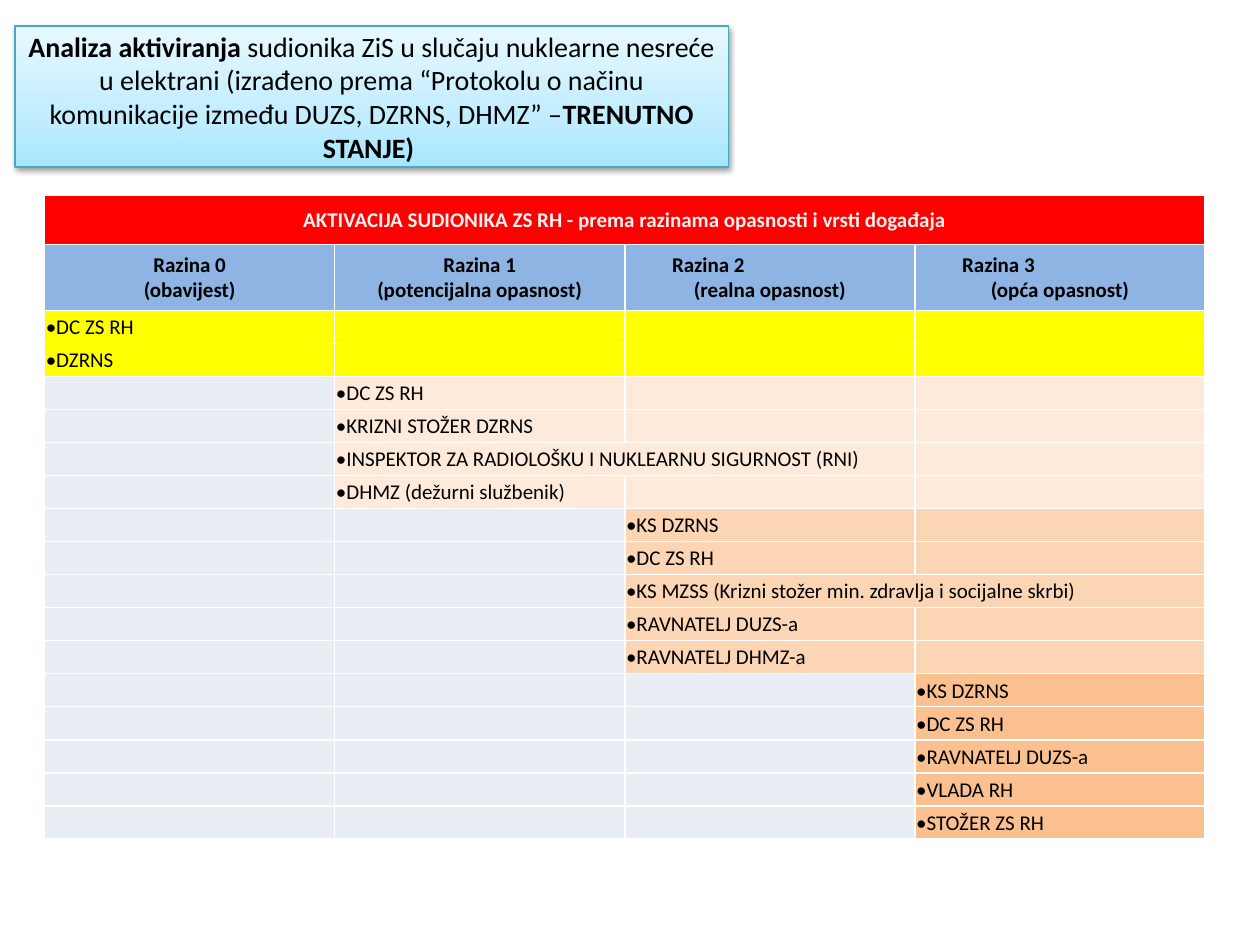
from dataclasses import dataclass
from copy import deepcopy

from lxml import etree
from pptx import Presentation
from pptx.dml.color import RGBColor
from pptx.enum.shapes import MSO_SHAPE
from pptx.enum.text import MSO_ANCHOR, PP_ALIGN
from pptx.oxml.ns import qn
from pptx.util import Inches, Pt

RECT = MSO_SHAPE.RECTANGLE
MIDDLE = MSO_ANCHOR.MIDDLE
LEFT, CENTER = PP_ALIGN.LEFT, PP_ALIGN.CENTER
WIDE, HIGH = Inches(10), Inches(7.5)


@dataclass(frozen=True)
class Theme:
    font: str = "Calibri"
    title: int = 16
    body: int = 12
    ink: str = "000000"
    pale: str = "F2F2F2"
    rule: str = "FFFFFF"
    edge: str = "46AAC5"
    glow: tuple = ((0, "A7E6FF"), (0.35, "C1EDFF"), (1, "E7F8FF"))
    banner: str = "FF0000"
    head: str = "8EB4E3"
    empty: str = "E9EDF4"
    levels: tuple = ("FFFF00", "FDEADA", "FCD5B5", "FAC090")


THEME = Theme()

TITLE = (
    ("Analiza aktiviranja ", True),
    ("sudionika ZiS u slučaju nuklearne nesreće u elektrani (izrađeno prema "
     "“Protokolu o načinu komunikacije između DUZS, DZRNS, DHMZ” –", False),
    ("TRENUTNO STANJE) ", True),
)
BANNER = "AKTIVACIJA SUDIONIKA ZS RH - prema razinama opasnosti i vrsti događaja"
HEADS = ("obavijest", "potencijalna opasnost", "realna opasnost", "opća opasnost")
INSPECTOR = "INSPEKTOR ZA RADIOLOŠKU I NUKLEARNU SIGURNOST (RNI)"
HEALTH = "KS MZSS (Krizni stožer min. zdravlja i socijalne skrbi)"
DOUBLE = (INSPECTOR, HEALTH)
LEVELS = (
    ("DC ZS RH", "DZRNS"),
    ("DC ZS RH", "KRIZNI STOŽER DZRNS", INSPECTOR, "DHMZ (dežurni službenik)"),
    ("KS DZRNS", "DC ZS RH", HEALTH, "RAVNATELJ DUZS-a", "RAVNATELJ DHMZ-a"),
    ("KS DZRNS", "DC ZS RH", "RAVNATELJ DUZS-a", "VLADA RH", "STOŽER ZS RH"),
)


def across(share):
    return int(WIDE * share / 100)


def down(share):
    return int(HIGH * share / 100)


def color(code):
    return RGBColor.from_string(code)


def style(run, size, code, bold):
    run.font.name = THEME.font
    run.font.size = Pt(size)
    run.font.bold = bold
    run.font.color.rgb = color(code)


def add_glow(shape):
    shape.fill.gradient()
    shape.fill.gradient_angle = 90
    stops = shape.element.spPr.find(".//" + qn("a:gsLst"))
    stops.append(deepcopy(stops[0]))
    for stop, (place, code) in zip(shape.fill.gradient_stops, THEME.glow):
        stop.position = place
        stop.color.rgb = color(code)


def add_shadow(shape):
    shape.shadow.inherit = False
    effects = shape.element.spPr.find(qn("a:effectLst"))
    outer = etree.SubElement(effects, qn("a:outerShdw"), blurRad=str(Pt(3.1)),
                             dist=str(Pt(1.6)), dir="5400000", rotWithShape="0")
    shade = etree.SubElement(outer, qn("a:srgbClr"), val=THEME.ink)
    etree.SubElement(shade, qn("a:alpha"), val="38000")


def add_title(slide):
    box = slide.shapes.add_shape(RECT, across(1.2), down(2.75), across(56.6), down(14.93))
    box.line.color.rgb = color(THEME.edge)
    box.line.width = Pt(0.75)
    add_glow(box)
    add_shadow(box)
    frame = box.text_frame
    frame.word_wrap = True
    frame.vertical_anchor = MIDDLE
    para = frame.paragraphs[0]
    para.alignment = CENTER
    for text, bold in TITLE:
        run = para.add_run()
        run.text = text
        style(run, THEME.title, THEME.ink, bold)


def paint(cell, code):
    props = cell._tc.get_or_add_tcPr()
    for side in ("lnL", "lnR", "lnT", "lnB"):
        line = etree.SubElement(props, qn(f"a:{side}"), w=str(Pt(1)))
        solid = etree.SubElement(line, qn("a:solidFill"))
        etree.SubElement(solid, qn("a:srgbClr"), val=THEME.rule)
    cell.fill.solid()
    cell.fill.fore_color.rgb = color(code)
    cell.margin_left = cell.margin_right = cell.margin_top = Inches(0.01)
    cell.margin_bottom = 0
    cell.vertical_anchor = MIDDLE
    para = cell.text_frame.paragraphs[0]
    etree.SubElement(para._p, qn("a:endParaRPr"), sz=str(THEME.body * 100))


def write(cell, text, code=THEME.ink, bold=False, align=LEFT):
    cell.text_frame.text = text
    for para in cell.text_frame.paragraphs:
        para.alignment = align
        for run in para.runs:
            style(run, THEME.body, code, bold)


def indent(para, share):
    para.alignment = LEFT
    para._p.get_or_add_pPr().set("marL", str(across(share)))


def add_heads(table):
    for col in range(len(HEADS)):
        paint(table.cell(0, col), THEME.banner)
    table.cell(0, 0).merge(table.cell(0, len(HEADS) - 1))
    write(table.cell(0, 0), BANNER, THEME.pale, True, CENTER)
    for col, kind in enumerate(HEADS):
        cell = table.cell(1, col)
        paint(cell, THEME.head)
        write(cell, f"Razina {col}\n({kind})", bold=True, align=CENTER)
        if col > 1:
            indent(cell.text_frame.paragraphs[0], 3.65)


def add_entry(table, row, level, name):
    for col in range(len(HEADS)):
        paint(table.cell(row, col), THEME.empty if col < level else THEME.levels[level])
    cell = table.cell(row, level)
    if name in DOUBLE:
        cell.merge(table.cell(row, level + 1))
    write(cell, "•" + name)


def add_levels(slide):
    entries = [(level, name) for level, names in enumerate(LEVELS) for name in names]
    heights = [5.25, 6.96] + [3.5] * len(entries)
    table = slide.shapes.add_table(len(heights), len(HEADS), across(3.54), down(20.63),
                                   across(92.1), down(sum(heights))).table
    table.first_row = table.horz_banding = False
    for row, share in zip(table.rows, heights):
        row.height = down(share)
    add_heads(table)
    for row, (level, name) in enumerate(entries, 2):
        add_entry(table, row, level, name)


def main():
    deck = Presentation()
    deck.slide_width, deck.slide_height = WIDE, HIGH
    slide = deck.slides.add_slide(deck.slide_layouts[6])
    add_title(slide)
    add_levels(slide)
    deck.save("out.pptx")


if __name__ == "__main__":
    main()
